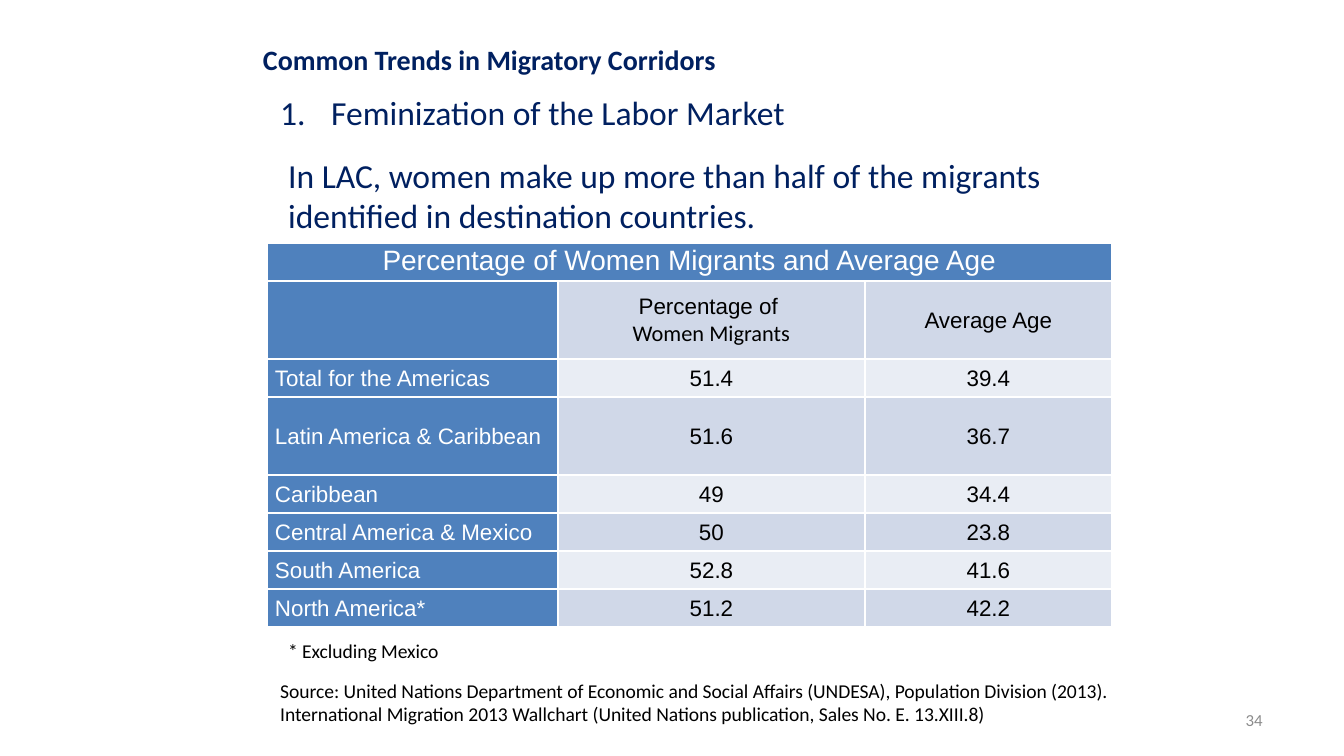
import lxml.etree
import pptx
import pptx.dml.color
import pptx.enum.text
import pptx.oxml.ns
import pptx.util

EMU_PER_PX = 914400 / 134.4
COLORS = {
    "navy": "002060",
    "blue": "4F81BD",
    "band dark": "D0D8E8",
    "band light": "E9EDF4",
    "white": "FFFFFF",
    "black": "000000",
    "gray": "8C8C8C",
}
ALIGN = pptx.enum.text.PP_ALIGN
MIDDLE = pptx.enum.text.MSO_ANCHOR.MIDDLE

TABLE_TITLE = "Percentage of Women Migrants and Average Age"
REGIONS = [
    ("Total for the Americas", "51.4", "39.4"),
    ("Latin America & Caribbean", "51.6", "36.7"),
    ("Caribbean", "49", "34.4"),
    ("Central America & Mexico", "50", "23.8"),
    ("South America", "52.8", "41.6"),
    ("North America*", "51.2", "42.2"),
]
COLUMN_WIDTHS = [291, 307, 247]
ROW_HEIGHTS = [38, 78, 38, 78, 38, 38, 38, 38]


def px(length):
    return pptx.util.Emu(round(length * EMU_PER_PX))


def rgb(name):
    return pptx.dml.color.RGBColor.from_string(COLORS[name])


def add_xml(parent, tag, **attributes):
    return lxml.etree.SubElement(parent, pptx.oxml.ns.qn(tag), attributes)


def write(frame, *lines, size=18, color="navy", fonts=("Calibri",), bold=False,
          align=ALIGN.LEFT, spacing=None):
    """Write one paragraph per line; the last font serves any further lines."""
    for index, line in enumerate(lines):
        para = frame.paragraphs[0] if index == 0 else frame.add_paragraph()
        para.alignment = align
        if spacing:
            para.line_spacing = spacing
        span = para.add_run()
        span.text = line
        span.font.name = fonts[min(index, len(fonts) - 1)]
        span.font.size = pptx.util.Pt(size)
        span.font.bold = bold
        span.font.color.rgb = rgb(color)


def add_text(page, box, *lines, wrap=True, grow=True, anchor=None, **text_format):
    frame = page.shapes.add_textbox(*map(px, box)).text_frame
    frame.word_wrap = wrap
    fit = pptx.enum.text.MSO_AUTO_SIZE
    frame.auto_size = fit.SHAPE_TO_FIT_TEXT if grow else fit.NONE
    if anchor is not None:
        frame.vertical_anchor = anchor
    write(frame, *lines, **text_format)
    return frame


def number_paragraph(para, indent):
    properties = para._p.get_or_add_pPr()
    properties.set("marL", str(px(indent)))
    properties.set("indent", str(-px(indent)))
    add_xml(properties, "a:buFont", typeface="+mj-lt")
    add_xml(properties, "a:buAutoNum", type="arabicPeriod")


def style_cell(cell, fill):
    """Set white borders on all sides, tight margins and a solid fill."""
    properties = cell._tc.get_or_add_tcPr()
    for side in ("a:lnL", "a:lnR", "a:lnT", "a:lnB"):
        line = add_xml(properties, side, w=str(pptx.util.Pt(1)))
        add_xml(add_xml(line, "a:solidFill"), "a:srgbClr", val=COLORS["white"])
    cell.fill.solid()
    cell.fill.fore_color.rgb = rgb(fill)
    cell.margin_left = cell.margin_right = px(8)
    cell.margin_top = cell.margin_bottom = 0


def fill_cell(cell, *lines, **text_format):
    cell.vertical_anchor = MIDDLE
    settings = {"size": 12, "color": "black", "fonts": ("Arial",),
                "align": ALIGN.CENTER, "spacing": 1.07}
    write(cell.text_frame, *lines, **{**settings, **text_format})


def add_header(page, left, top):
    add_text(page, (left, top, 485, 47), "Common Trends in Migratory Corridors",
             size=15, bold=True, align=ALIGN.CENTER, wrap=False)
    topic = add_text(page, (left + 20, top + 49, 825, 54),
                     "Feminization of the Labor Market", align=ALIGN.JUSTIFY)
    number_paragraph(topic.paragraphs[0], 51)
    add_text(page, (left + 28, top + 112, 841, 95),
             "In LAC, women make up more than half of the migrants "
             "identified in destination countries.")


def add_migrant_table(page, left, top):
    box = (left, top, sum(COLUMN_WIDTHS), sum(ROW_HEIGHTS))
    table = page.shapes.add_table(
        len(ROW_HEIGHTS), len(COLUMN_WIDTHS), *map(px, box)).table
    for column, width in zip(table.columns, COLUMN_WIDTHS):
        column.width = px(width)
    for row_index, (row, height) in enumerate(zip(table.rows, ROW_HEIGHTS)):
        row.height = px(height)
        band = "band dark" if row_index % 2 else "band light"
        for column_index, cell in enumerate(row.cells):
            heading = row_index == 0 or column_index == 0
            style_cell(cell, "blue" if heading else band)

    table.cell(0, 0).merge(table.cell(0, 2))
    fill_cell(table.cell(0, 0), TABLE_TITLE, size=15, color="white")
    table.cell(0, 0).vertical_anchor = pptx.enum.text.MSO_ANCHOR.TOP
    fill_cell(table.cell(1, 1), "Percentage of ", "Women Migrants",
              fonts=("Arial", "Calibri"))
    fill_cell(table.cell(1, 2), "Average Age")
    for row_index, (region, *values) in enumerate(REGIONS, start=2):
        fill_cell(table.cell(row_index, 0), region, color="white", align=ALIGN.LEFT)
        for column_index, value in enumerate(values, start=1):
            fill_cell(table.cell(row_index, column_index), value)


def add_footer(page, left, top):
    note_format = {"size": 10.5, "color": "black", "wrap": False}
    add_text(page, (left + 8, top, 180, 38), "* Excluding Mexico", **note_format)
    add_text(page, (left, top + 40, 871, 61),
             "Source: United Nations Department of Economic and Social Affairs "
             "(UNDESA), Population Division (2013).",
             "International Migration 2013 Wallchart (United Nations publication, "
             "Sales No. E. 13.XIII.8)", **note_format)
    add_text(page, (left + 696, top + 68, 313, 40), "34", size=9, color="gray",
             align=ALIGN.RIGHT, anchor=MIDDLE, grow=False)


def main():
    deck = pptx.Presentation()
    deck.slide_width, deck.slide_height = px(1344), px(756)
    page = deck.slides.add_slide(deck.slide_layouts[6])
    add_header(page, 247, 36)
    add_migrant_table(page, 267, 243)
    add_footer(page, 267, 632)
    deck.save("out.pptx")


if __name__ == "__main__":
    main()
